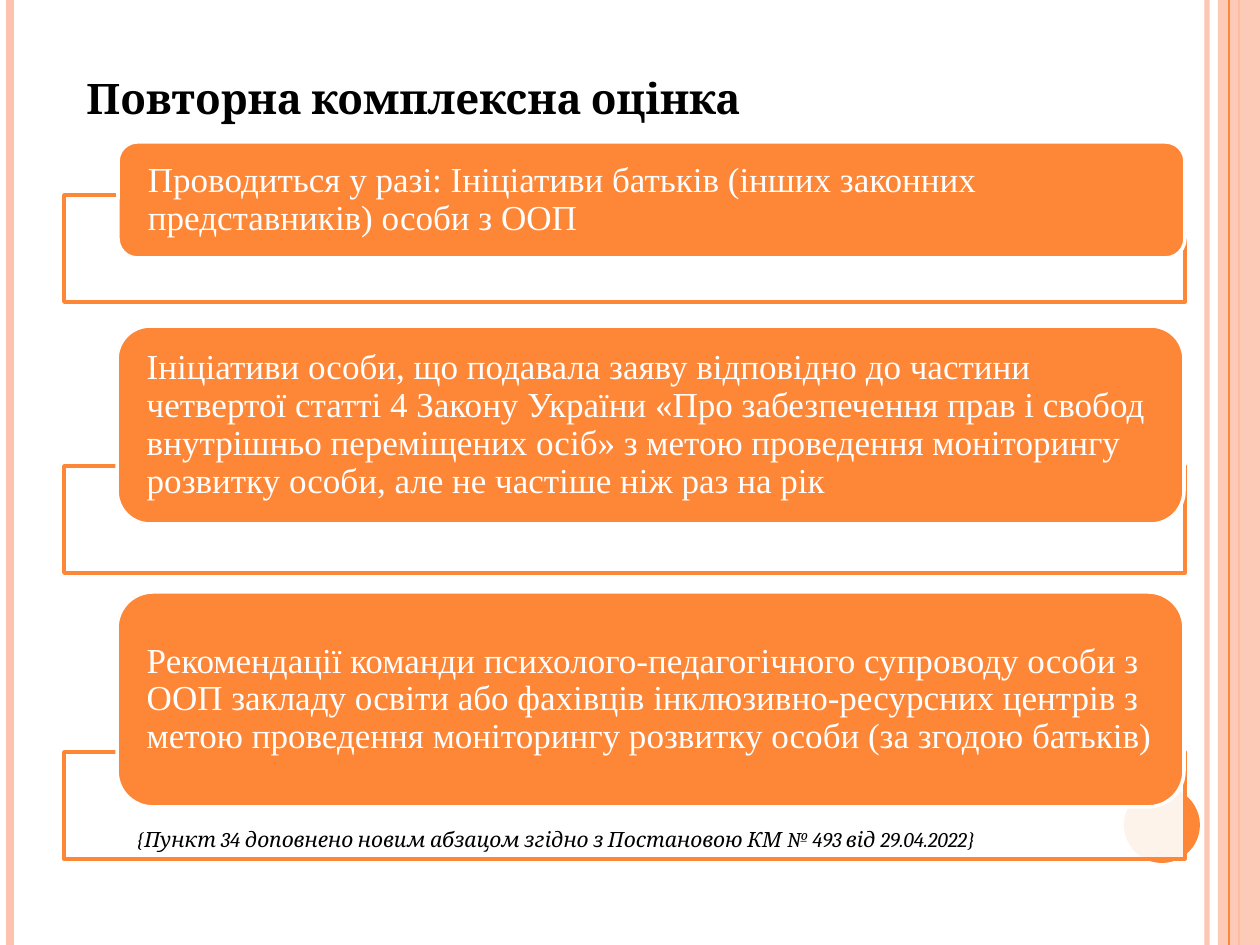
import pptx
import pptx.util
import pptx.dml.color
import pptx.enum.shapes
import pptx.enum.text
import pptx.oxml
import pptx.oxml.ns

RGB = pptx.dml.color.RGBColor
ORANGE = RGB(0xFE, 0x86, 0x37)
PEACH = RGB(0xFE, 0xC3, 0xAE)
WHITE = RGB(0xFF, 0xFF, 0xFF)
BLACK = RGB(0, 0, 0)
KIND = pptx.enum.shapes.MSO_SHAPE
ANCHOR = pptx.enum.text.MSO_ANCHOR
ALIGN = pptx.enum.text.PP_ALIGN
WIDE, HIGH = 1260, 945
SCALE = 914400 / 126


def emu(*sizes):
    return [pptx.util.Emu(round(size * SCALE)) for size in sizes]


def fade(part, share):
    color = part.find(".//" + pptx.oxml.ns.qn("a:srgbClr"))
    alpha = color.makeelement(pptx.oxml.ns.qn("a:alpha"), {"val": str(share * 1000)})
    color.append(alpha)


class Deck:
    """Draws the slide's parts in one style, with lengths in px."""

    def __init__(self):
        self.show = pptx.Presentation()
        self.show.slide_width, self.show.slide_height = emu(WIDE, HIGH)
        self.shapes = self.show.slides.add_slide(self.show.slide_layouts[6]).shapes

    def stripe(self, x, color, width, share=100):
        line = self.shapes.add_connector(
            pptx.enum.shapes.MSO_CONNECTOR.STRAIGHT, *emu(x, 0, x, HIGH))
        line.line.color.rgb = color
        line.line.width = pptx.util.Pt(width)
        props = line.element.spPr
        if share < 100:
            fade(props, share)
        props.append(props.makeelement(pptx.oxml.ns.qn("a:effectLst"), {}))

    def shape(self, kind, box, fill, edge=None, share=100):
        shape = self.shapes.add_shape(kind, *emu(*box))
        shape.shadow.inherit = False
        shape.fill.solid()
        shape.fill.fore_color.rgb = fill
        if share < 100:
            fade(shape.element.spPr, share)
        if edge is None:
            shape.line.fill.background()
        else:
            shape.line.color.rgb = edge
            shape.line.width = pptx.util.Pt(2)
        return shape

    def words(self, frame, text, size, face, color, bold=False, slant=False):
        frame.word_wrap = True
        par = frame.paragraphs[0]
        par.text = text
        par.alignment = ALIGN.LEFT
        font = par.font
        font.size, font.name = pptx.util.Pt(size), face
        font.bold, font.italic = bold, slant
        font.color.rgb = color
        return par

    def label(self, box, text, size, **style):
        frame = self.shapes.add_textbox(*emu(*box)).text_frame
        self.words(frame, text, size, "Cambria", BLACK, **style)

    def card(self, left, top, high, base, text):
        self.shape(KIND.RECTANGLE, (64, base, 1121, 107), WHITE, ORANGE, 90)
        card = self.shape(KIND.ROUNDED_RECTANGLE, (left, top, 1067, high), ORANGE, WHITE)
        frame = card.text_frame
        inset, = emu(30 - 0.05 * high)
        frame.margin_left = frame.margin_right = inset
        frame.margin_top = frame.margin_bottom = 0
        frame.vertical_anchor = ANCHOR.MIDDLE
        self.words(frame, text, 20, "Times New Roman", WHITE).line_spacing = 0.9


CARDS = [
    (118, 142, 116, 195,
     "Проводиться у разі: Ініціативи батьків (інших законних представників) особи з ООП"),
    (117, 326, 198, 466,
     "Ініціативи особи, що подавала заяву відповідно до частини четвертої статті 4 "
     "Закону України «Про забезпечення прав і свобод внутрішньо переміщених осіб» "
     "з метою проведення моніторингу розвитку особи, але не частіше ніж раз на рік"),
    (117, 592, 215, 752,
     "Рекомендації команди психолого-педагогічного супроводу особи з ООП закладу "
     "освіти або фахівців інклюзивно-ресурсних центрів з метою проведення "
     "моніторингу розвитку особи (за згодою батьків)"),
]


def main():
    deck = Deck()
    deck.stripe(1207, PEACH, 3, 93)
    deck.stripe(10, PEACH, 4.5)
    deck.stripe(1239, ORANGE, 1.5)
    deck.shape(KIND.RECTANGLE, (1218, 0, 42, HIGH), PEACH, share=87)
    deck.stripe(1229, ORANGE, 0.75)
    deck.shape(KIND.OVAL, (1124, 787, 76, 76), ORANGE)
    deck.label((74, 66, 1131, 165), "Повторна комплексна оцінка", 24, bold=True)
    for card in CARDS:
        deck.card(*card)
    deck.label((124, 820, 1062, 38),
               "{Пункт 34 доповнено новим абзацом згідно з Постановою КМ № 493 від 29.04.2022}",
               12, slant=True)
    deck.show.save("out.pptx")


if __name__ == "__main__":
    main()
